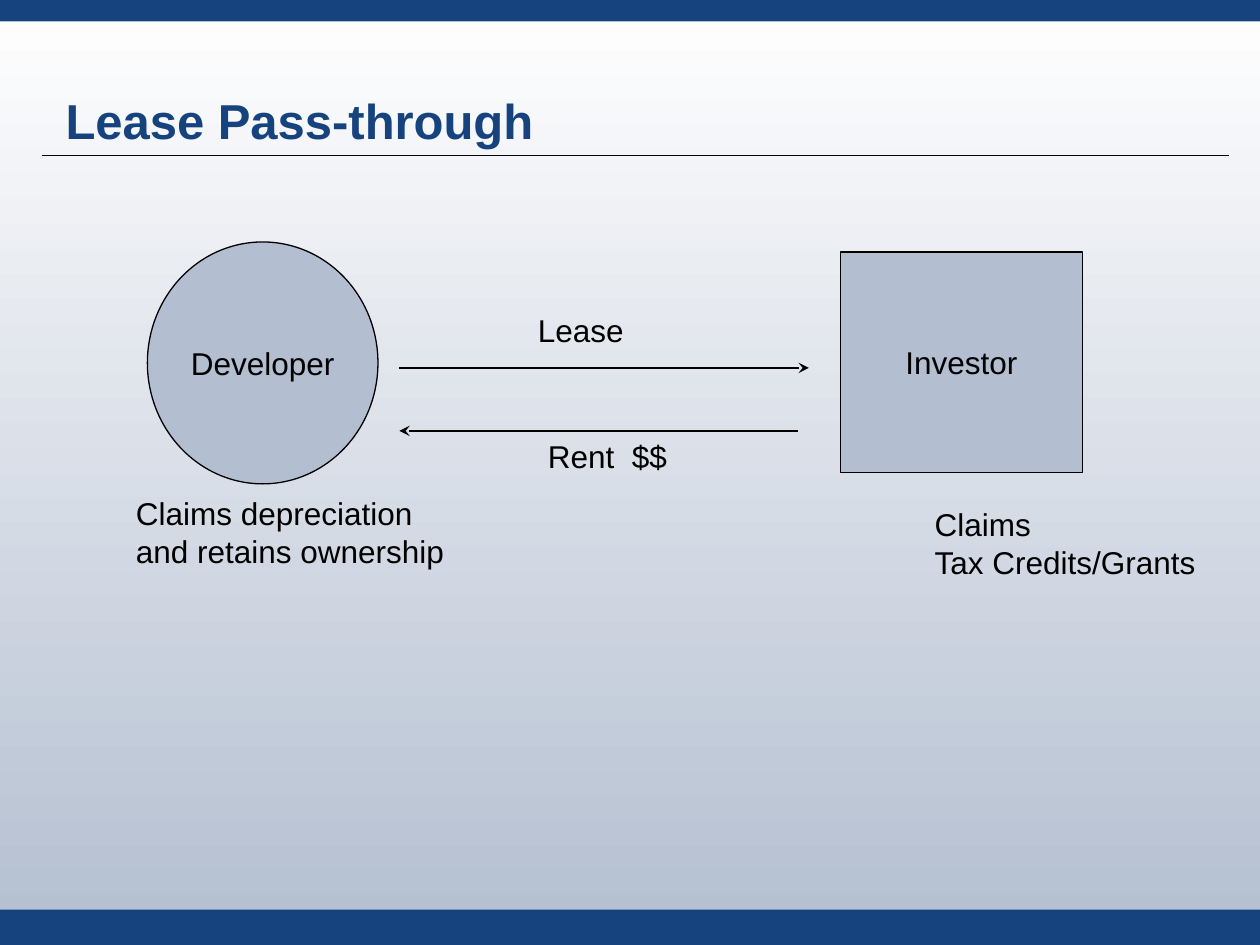
from pptx import Presentation
from pptx.dml.color import RGBColor
from pptx.enum.shapes import MSO_CONNECTOR, MSO_SHAPE
from pptx.enum.text import MSO_ANCHOR, MSO_AUTO_SIZE, PP_ALIGN
from pptx.oxml.ns import qn
from pptx.util import Inches, Pt
from lxml.etree import SubElement

BLACK = RGBColor(0x00, 0x00, 0x00)
WHITE = RGBColor(0xFF, 0xFF, 0xFF)
NAVY = RGBColor(0x16, 0x43, 0x7E)
MIST = RGBColor(0xB3, 0xBE, 0xD0)


class LeasePage:
    font = "Arial"
    body_size = 18
    title_size = 28
    line_width = 0.75

    def __init__(self, deck):
        self.page = deck.slides.add_slide(deck.slide_layouts[5])
        self.shapes = self.page.shapes

    def background(self, top, bottom):
        fill = self.page.background.fill
        fill.gradient()
        fill.gradient_angle = 270
        for stop, color, position in zip(fill.gradient_stops, (top, bottom), (0, 1)):
            stop.color.rgb = color
            stop.position = position

    def style(self, paragraph, size, color, bold=False):
        for span in paragraph.runs:
            span.font.name = self.font
            span.font.size = Pt(size)
            span.font.bold = bold
            span.font.color.rgb = color

    def title(self, text, left, top, width, height):
        box = self.shapes.title
        box.left, box.top = Inches(left), Inches(top)
        box.width, box.height = Inches(width), Inches(height)
        frame = box.text_frame
        frame.text = text
        frame.auto_size = MSO_AUTO_SIZE.NONE
        frame.vertical_anchor = MSO_ANCHOR.BOTTOM
        para = frame.paragraphs[0]
        para.alignment = PP_ALIGN.LEFT
        para.line_spacing = 0.9
        self.style(para, self.title_size, NAVY, bold=True)

    def shape(self, kind, left, top, width, height, color):
        shape = self.shapes.add_shape(
            kind, Inches(left), Inches(top), Inches(width), Inches(height))
        shape.shadow.inherit = False
        shape.fill.solid()
        shape.fill.fore_color.rgb = color
        return shape

    def band(self, top, height):
        band = self.shape(MSO_SHAPE.RECTANGLE, 0, top, 10, height, NAVY)
        band.line.fill.background()

    def party(self, kind, text, left, top, width, height):
        party = self.shape(kind, left, top, width, height, MIST)
        party.line.color.rgb = BLACK
        party.line.width = Pt(self.line_width)
        frame = party.text_frame
        frame.text = text
        frame.word_wrap = False
        frame.vertical_anchor = MSO_ANCHOR.MIDDLE
        para = frame.paragraphs[0]
        para.alignment = PP_ALIGN.CENTER
        self.style(para, self.body_size, BLACK)

    def label(self, text, left, top, width, height):
        box = self.shapes.add_textbox(
            Inches(left), Inches(top), Inches(width), Inches(height))
        frame = box.text_frame
        frame.text = text
        frame.word_wrap = False
        frame.auto_size = MSO_AUTO_SIZE.SHAPE_TO_FIT_TEXT
        for para in frame.paragraphs:
            self.style(para, self.body_size, BLACK)

    def rule(self, start, end, y, width):
        rule = self.shapes.add_connector(
            MSO_CONNECTOR.STRAIGHT, Inches(start), Inches(y), Inches(end), Inches(y))
        rule.line.color.rgb = BLACK
        rule.line.width = Pt(width)
        SubElement(rule._element.spPr, qn("a:effectLst"))
        return rule

    def arrow(self, start, end, y):
        arrow = self.rule(start, end, y, self.line_width)
        SubElement(arrow.line._get_or_add_ln(), qn("a:tailEnd"), type="stealth")


def main():
    deck = Presentation()
    deck.slide_width, deck.slide_height = Inches(10), Inches(7.5)
    page = LeasePage(deck)
    page.background(WHITE, MIST)
    page.rule(0.33, 9.75, 1.23, 0.5)
    page.band(7.22, 0.28)
    page.band(0, 0.17)
    page.title("Lease Pass-through", 0.42, 0.17, 7.08, 1.07)

    page.party(MSO_SHAPE.OVAL, "Developer", 1.17, 1.92, 1.83, 1.92)
    page.party(MSO_SHAPE.RECTANGLE, "Investor", 6.67, 2, 1.92, 1.75)
    page.arrow(3.17, 6.42, 2.92)
    page.arrow(6.33, 3.17, 3.42)

    page.label("Lease", 4.17, 2.42, 0.88, 0.4)
    page.label("Rent  $$", 4.25, 3.42, 1.15, 0.4)
    page.label("Claims\nTax Credits/Grants", 7.32, 3.96, 2.3, 0.7)
    page.label("Claims depreciation\nand retains ownership", 0.98, 3.87, 2.65, 0.7)
    deck.save("out.pptx")


if __name__ == "__main__":
    main()
